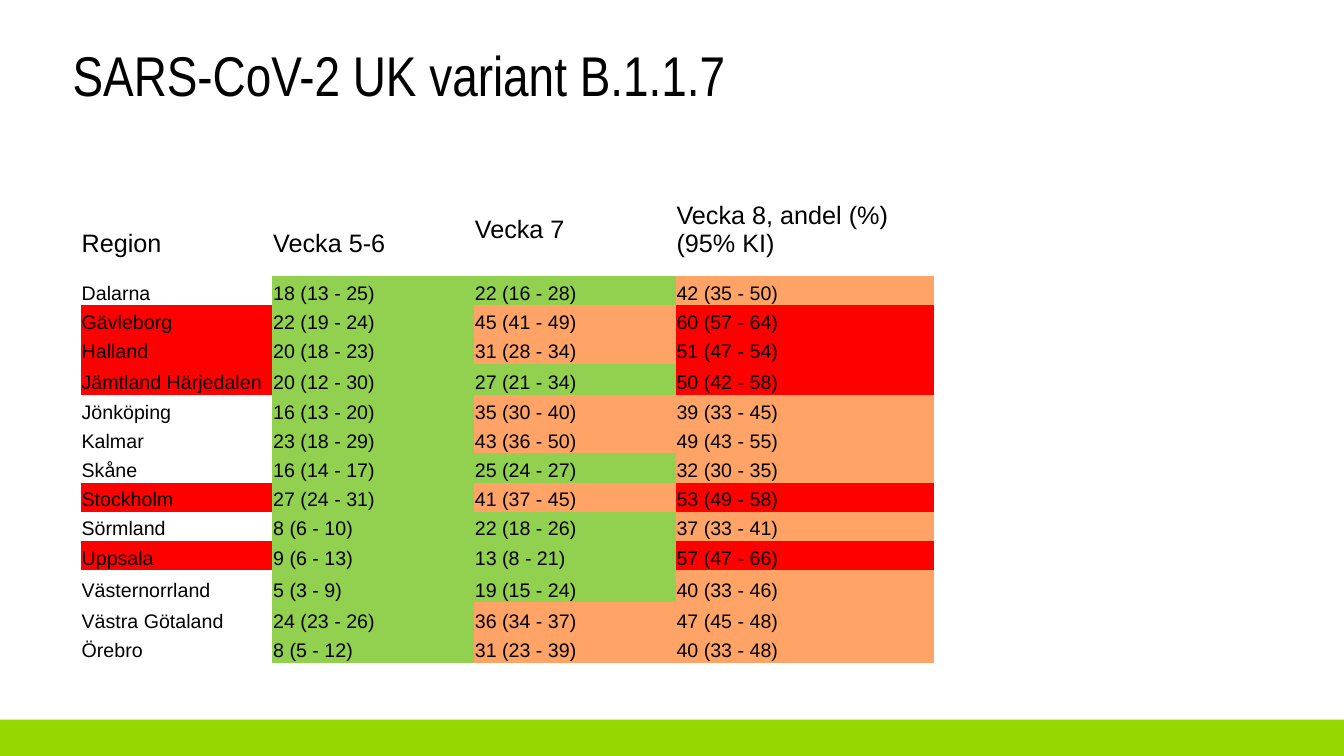
from pptx import Presentation
from pptx.dml.color import RGBColor
from pptx.enum.shapes import MSO_SHAPE
from pptx.enum.text import MSO_ANCHOR, PP_ALIGN
from pptx.util import Inches, Pt

BLACK = RGBColor(0x00, 0x00, 0x00)
LIME = RGBColor(0x97, 0xD7, 0x00)
GREEN = RGBColor(0x92, 0xD0, 0x50)
ORANGE = RGBColor(0xFF, 0xA3, 0x66)
RED = RGBColor(0xFF, 0x00, 0x00)
MIDDLE, BOTTOM = MSO_ANCHOR.MIDDLE, MSO_ANCHOR.BOTTOM
LEFT = PP_ALIGN.LEFT
NO_STYLE = "{2D5ABB26-0587-4C30-8999-92F81FD0307C}"

HEADERS = [  # text, line spacing, anchor, bottom margin
    ("Region", Pt(10), BOTTOM, 0.18),
    ("Vecka 5-6", 2.0, MIDDLE, 0.01),
    ("Vecka 7", 1.0, MIDDLE, 0.01),
    ("Vecka 8, andel (%) (95% KI)", 1.0, MIDDLE, 0.01),
]
REGIONS = [
    ("Dalarna", "18 (13 - 25)", "22 (16 - 28)", "42 (35 - 50)"),
    ("Gävleborg", "22 (19 - 24)", "45 (41 - 49)", "60 (57 - 64)"),
    ("Halland", "20 (18 - 23)", "31 (28 - 34)", "51 (47 - 54)"),
    ("Jämtland Härjedalen", "20 (12 - 30)", "27 (21 - 34)", "50 (42 - 58)"),
    ("Jönköping", "16 (13 - 20)", "35 (30 - 40)", "39 (33 - 45)"),
    ("Kalmar", "23 (18 - 29)", "43 (36 - 50)", "49 (43 - 55)"),
    ("Skåne", "16 (14 - 17)", "25 (24 - 27)", "32 (30 - 35)"),
    ("Stockholm", "27 (24 - 31)", "41 (37 - 45)", "53 (49 - 58)"),
    ("Sörmland", "8 (6 - 10)", "22 (18 - 26)", "37 (33 - 41)"),
    ("Uppsala", "9 (6 - 13)", "13 (8 - 21)", "57 (47 - 66)"),
    ("Västernorrland", "5 (3 - 9)", "19 (15 - 24)", "40 (33 - 46)"),
    ("Västra Götaland", "24 (23 - 26)", "36 (34 - 37)", "47 (45 - 48)"),
    ("Örebro", "8 (5 - 12)", "31 (23 - 39)", "40 (33 - 48)"),
]
COLUMN_WIDTHS = [1.9, 2, 2, 2.56]
HEADER_HEIGHT, ROW_HEIGHT = 0.92, 0.29
TALL_ROWS = {"Jämtland Härjedalen": 0.31, "Västernorrland": 0.32, "Västra Götaland": 0.31}


def write(box, text, size=14, font="Arial", spacing=Pt(10), after=3):
    """Put one left-aligned black paragraph into a shape or a cell."""
    para = box.text_frame.paragraphs[0]
    para.alignment = LEFT
    para.line_spacing = spacing
    para.space_before, para.space_after = Pt(0), Pt(after)
    span = para.add_run()
    span.text = text
    span.font.size, span.font.name = Pt(size), font
    span.font.color.rgb = BLACK


def share_colour(text):
    """Colour for the share that starts the text: 30 % and 50 % are the limits."""
    share = int(text.split()[0])
    return GREEN if share < 30 else ORANGE if share < 50 else RED


deck = Presentation()
deck.slide_width, deck.slide_height = Inches(13.33), Inches(7.5)
page = deck.slides.add_slide(deck.slide_layouts[5])

bar_top = int(deck.slide_height * 0.952)
bar = page.shapes.add_shape(MSO_SHAPE.RECTANGLE, 0, bar_top,
                            deck.slide_width, deck.slide_height - bar_top)
bar.shadow.inherit = False
bar.fill.solid()
bar.fill.fore_color.rgb = LIME
bar.line.fill.background()

title = page.shapes.title
title.left, title.top = Inches(0.62), Inches(0.42)
title.width, title.height = Inches(11.44), Inches(0.71)
title.text_frame.vertical_anchor = MIDDLE
write(title, "SARS-CoV-2 UK variant B.1.1.7", size=40, font="Arial Narrow", spacing=0.9, after=0)

row_heights = [HEADER_HEIGHT] + [TALL_ROWS.get(row[0], ROW_HEIGHT) for row in REGIONS]
frame = page.shapes.add_table(len(row_heights), len(COLUMN_WIDTHS), Inches(0.8), Inches(1.82),
                              Inches(sum(COLUMN_WIDTHS)), Inches(sum(row_heights)))
table = frame.table
table.first_row = table.horz_banding = False
for style in frame.element.iter("{*}tableStyleId"):
    style.text = NO_STYLE
for column, width in zip(table.columns, COLUMN_WIDTHS):
    column.width = Inches(width)
for row, height in zip(table.rows, row_heights):
    row.height = Inches(height)
for cell in table.iter_cells():
    cell.margin_left = cell.margin_right = cell.margin_top = cell.margin_bottom = Inches(0.01)
    cell.vertical_anchor = BOTTOM
    cell.fill.background()

for index, (text, spacing, anchor, margin) in enumerate(HEADERS):
    cell = table.cell(0, index)
    cell.vertical_anchor = anchor
    cell.margin_bottom = Inches(margin)
    write(cell, text, size=18, spacing=spacing)

for row_index, (region, *shares) in enumerate(REGIONS, start=1):
    colours = [share_colour(share) for share in shares]
    region_colour = RED if colours[-1] == RED else None
    for index, (text, colour) in enumerate(zip([region, *shares], [region_colour, *colours])):
        cell = table.cell(row_index, index)
        write(cell, text)
        if colour is not None:
            cell.fill.solid()
            cell.fill.fore_color.rgb = colour

deck.save("out.pptx")
